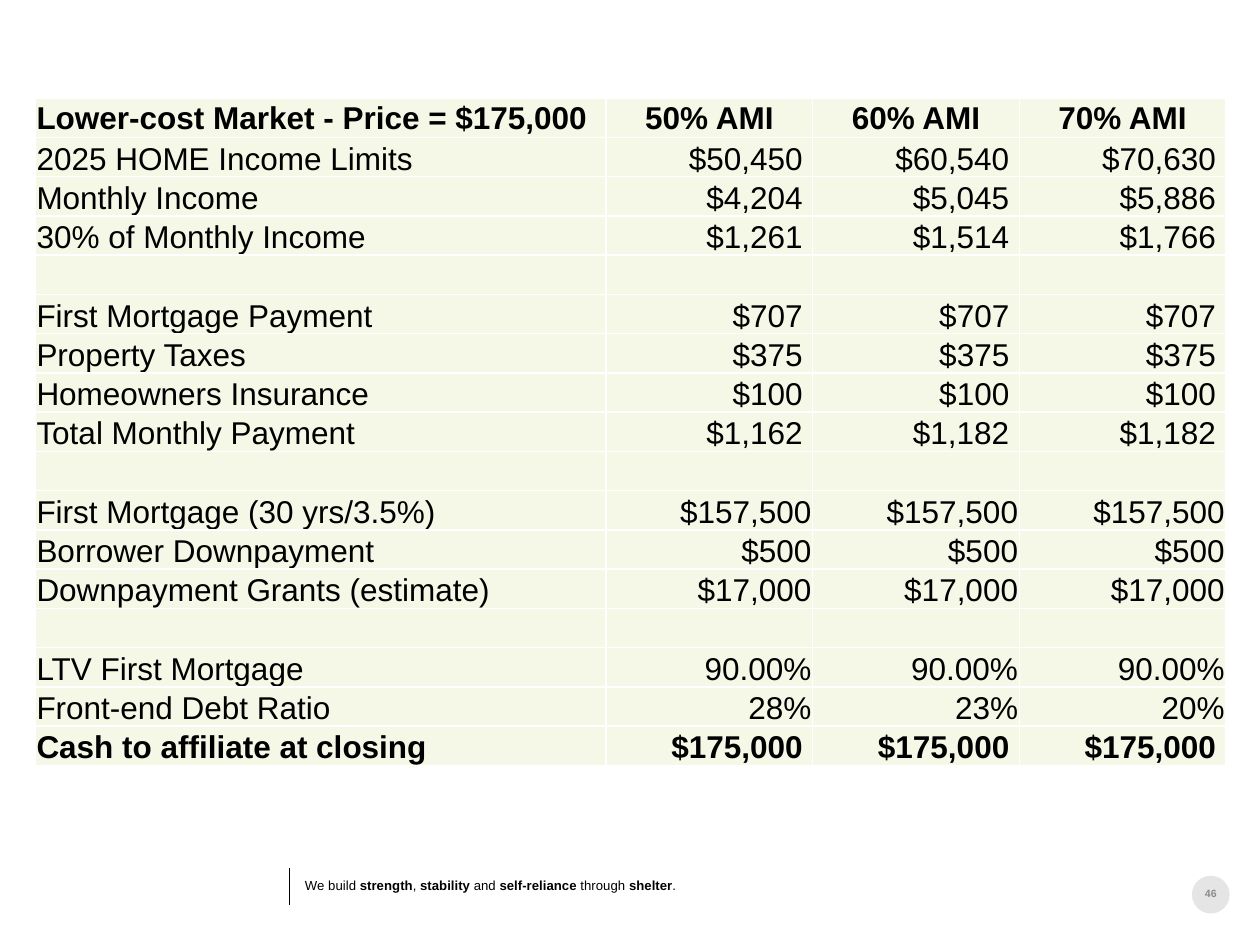
"""Build an affordability table slide with a tagline footer."""
from typing import NamedTuple

from lxml.etree import SubElement
from pptx import Presentation
from pptx.dml.color import RGBColor
from pptx.enum.shapes import MSO_CONNECTOR, MSO_SHAPE
from pptx.enum.text import MSO_ANCHOR, PP_ALIGN
from pptx.oxml.ns import qn
from pptx.util import Inches, Pt

WIDTH, HEIGHT = Inches(10), Inches(7.5)
FONT = "Arial"
COLOURS = {"ink": "000000", "cell": "F5F7E7", "border": "FFFFFF", "number": "888B8D"}
COLUMN_WIDTHS = (4.53, 1.64, 1.64, 1.64)
TABLE_HEIGHT = 5.3


class Box(NamedTuple):
    """Left, top, width and height as percentages of the slide."""
    left: float
    top: float
    width: float
    height: float

    def lengths(self) -> tuple[int, int, int, int]:
        """Return the box in slide units."""
        return (int(WIDTH * self.left / 100), int(HEIGHT * self.top / 100),
                int(WIDTH * self.width / 100), int(HEIGHT * self.height / 100))


class Run(NamedTuple):
    """A piece of text in one weight."""
    text: str
    bold: bool = False


class Row(NamedTuple):
    """A table row: label, values, weight, value ending and alignment."""
    label: str = ""
    values: tuple[str, ...] = ("", "", "")
    bold: bool = False
    ending: str = ""
    alignment: PP_ALIGN = PP_ALIGN.RIGHT
    anchor: MSO_ANCHOR = MSO_ANCHOR.BOTTOM


ROWS = (
    Row("Lower-cost Market - Price = $175,000", ("50% AMI", "60% AMI", "70% AMI"),
        True, "", PP_ALIGN.CENTER, MSO_ANCHOR.MIDDLE),
    Row("2025 HOME Income Limits", ("$50,450", "$60,540", "$70,630"), ending=" "),
    Row("Monthly Income", ("$4,204", "$5,045", "$5,886"), ending=" "),
    Row("30% of Monthly Income", ("$1,261", "$1,514", "$1,766"), ending=" "),
    Row(),
    Row("First Mortgage Payment", ("$707",) * 3, ending=" "),
    Row("Property Taxes", ("$375",) * 3, ending=" "),
    Row("Homeowners Insurance", ("$100",) * 3, ending=" "),
    Row("Total Monthly Payment", ("$1,162", "$1,182", "$1,182"), ending=" "),
    Row(),
    Row("First Mortgage (30 yrs/3.5%)", ("$157,500",) * 3),
    Row("Borrower Downpayment", ("$500",) * 3),
    Row("Downpayment Grants (estimate)", ("$17,000",) * 3),
    Row(),
    Row("LTV First Mortgage", ("90.00%",) * 3),
    Row("Front-end Debt Ratio", ("28%", "23%", "20%")),
    Row("Cash to affiliate at closing", ("$175,000",) * 3, True, " "),
)
TAGLINE = (
    Run("We build "), Run("strength", True), Run(", "), Run("stability", True),
    Run(" and "), Run("self-reliance", True), Run(" through "),
    Run("shelter", True), Run("."),
)


def colour(name: str) -> RGBColor:
    """Look up a named colour."""
    return RGBColor.from_string(COLOURS[name])


def add_runs(paragraph, runs: tuple[Run, ...], size: float, ink: str = "ink") -> None:
    """Add formatted runs to a paragraph."""
    for piece in runs:
        run = paragraph.add_run()
        run.text = piece.text
        run.font.name, run.font.size, run.font.bold = FONT, Pt(size), piece.bold
        run.font.color.rgb = colour(ink)


def add_text(slide, box: Box, runs: tuple[Run, ...], size: float, ink: str = "ink",
             alignment: PP_ALIGN = PP_ALIGN.LEFT, spacing: float = 1.0) -> None:
    """Add a text box without insets."""
    frame = slide.shapes.add_textbox(*box.lengths()).text_frame
    frame.word_wrap = True
    frame.margin_left = frame.margin_top = frame.margin_right = frame.margin_bottom = 0
    paragraph = frame.paragraphs[0]
    paragraph.alignment, paragraph.line_spacing = alignment, spacing
    add_runs(paragraph, runs, size, ink)


def add_badge(slide, box: Box) -> None:
    """Add the pale disc behind the slide number."""
    disc = slide.shapes.add_shape(MSO_SHAPE.OVAL, *box.lengths())
    disc.shadow.inherit = False
    disc.fill.solid()
    disc.fill.fore_color.rgb = colour("ink")
    disc.line.fill.background()
    tint = disc.fill._xPr.find(qn("a:solidFill"))[0]
    SubElement(tint, qn("a:alpha"), val="10000")


def add_rule(slide, box: Box) -> None:
    """Add the thin rule beside the tagline."""
    left, top, width, height = box.lengths()
    rule = slide.shapes.add_connector(
        MSO_CONNECTOR.STRAIGHT, left, top, left + width, top + height)
    rule.line.color.rgb, rule.line.width = colour("ink"), Pt(0.5)
    SubElement(rule._element.spPr, qn("a:effectLst"))


def style_cell(cell, anchor: MSO_ANCHOR) -> None:
    """Set the borders, fill, insets and anchor of a cell."""
    properties = cell._tc.get_or_add_tcPr()
    for side in ("a:lnL", "a:lnR", "a:lnT", "a:lnB"):
        border = SubElement(properties, qn(side), w=str(Pt(1)))
        fill = SubElement(border, qn("a:solidFill"))
        SubElement(fill, qn("a:srgbClr"), val=COLOURS["border"])
    cell.fill.solid()
    cell.fill.fore_color.rgb = colour("cell")
    cell.margin_left = cell.margin_top = cell.margin_right = Inches(0.01)
    cell.margin_bottom = 0
    cell.vertical_anchor = anchor


def add_affordability_table(slide, box: Box) -> None:
    """Add the table of incomes, payments and mortgages."""
    table = slide.shapes.add_table(
        len(ROWS), len(COLUMN_WIDTHS), *box.lengths()).table
    table.first_row = table.horz_banding = False
    for column, width in zip(table.columns, COLUMN_WIDTHS):
        column.width = Inches(width)
    for table_row, row in zip(table.rows, ROWS):
        table_row.height = int(Inches(TABLE_HEIGHT) / len(ROWS))
        texts = (row.label, *(value + row.ending for value in row.values))
        for index, (cell, text) in enumerate(zip(table_row.cells, texts)):
            style_cell(cell, row.anchor)
            if text:
                paragraph = cell.text_frame.paragraphs[0]
                paragraph.alignment = row.alignment if index else PP_ALIGN.LEFT
                add_runs(paragraph, (Run(text, row.bold),), 18)


def main() -> None:
    """Build and save the presentation."""
    presentation = Presentation()
    presentation.slide_width, presentation.slide_height = WIDTH, HEIGHT
    slide = presentation.slides.add_slide(presentation.slide_layouts[6])
    add_badge(slide, Box(94.6, 92.67, 3, 4))
    add_text(slide, Box(94.8, 93.87, 2.6, 1.47), (Run("46", True),), 6, "number",
             PP_ALIGN.CENTER)
    add_rule(slide, Box(23, 91.87, 0, 3.87))
    add_text(slide, Box(24.2, 93.2, 37.8, 1.33), TAGLINE, 7.5, spacing=0.8)
    add_affordability_table(slide, Box(2.8, 10.4, 94.4, 70.67))
    presentation.save("out.pptx")


if __name__ == "__main__":
    main()
